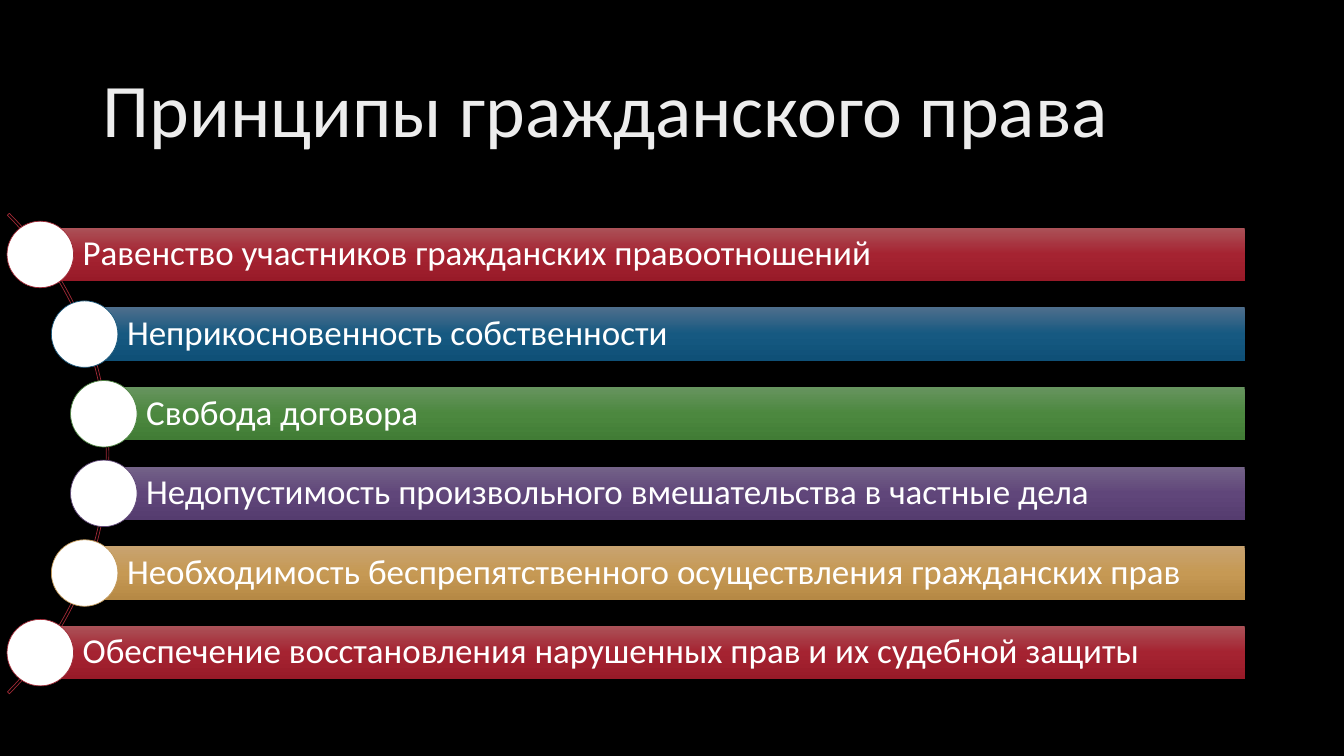
from lxml.etree import SubElement
from pptx import Presentation
from pptx.dml.color import RGBColor as RGB
from pptx.enum.shapes import MSO_SHAPE as SHAPE
from pptx.enum.text import MSO_ANCHOR as ANCHOR, MSO_AUTO_SIZE as AUTO, PP_ALIGN as ALIGN
from pptx.oxml.ns import qn
from pptx.util import Inches, Pt

COLORS = {
    "black": "000000",
    "white": "FFFFFF",
    "red": "9F2936",
    "blue": "1B587C",
    "green": "4E8542",
    "purple": "604878",
    "gold": "C19859",
}
GRADIENTS = {
    "title": [(0, "BFBFBF"), (28, "EDEDED"), (100, "FFFFFF")],
    "red": [(0, "AB5258"), (50, "A52331"), (100, "981A28")],
    "blue": [(0, "4E6E8C"), (50, "165981"), (100, "0F5077")],
    "green": [(0, "67945F"), (50, "4C883F"), (100, "417C35")],
    "purple": [(0, "746388"), (50, "60467A"), (100, "553C6F")],
    "gold": [(0, "C8A370"), (50, "C69954"), (100, "B68945")],
}


def set_gradient(fill, element, stops, angle):
    fill.gradient()
    fill.gradient_angle = 360 - angle
    stop_list = next(element.iter(qn("a:gsLst")))
    for stop in list(stop_list):
        stop_list.remove(stop)
    for position, color in stops:
        stop = SubElement(stop_list, qn("a:gs"), pos=str(position * 1000))
        SubElement(stop, qn("a:srgbClr"), val=color)


def write_text(shape, text, size, color=None, gradient=None, insets=(0.1, 0.05, 0.1, 0.05)):
    tf = shape.text_frame
    tf.word_wrap = True
    tf.auto_size = AUTO.NONE
    tf.vertical_anchor = ANCHOR.MIDDLE
    tf.margin_left, tf.margin_top, tf.margin_right, tf.margin_bottom = map(Inches, insets)
    p = tf.paragraphs[0]
    p.alignment = ALIGN.LEFT
    p.line_spacing = 0.9
    r = p.add_run()
    r.text = text
    r.font.size = Pt(size)
    r.font.name = "Calibri"
    if gradient:
        set_gradient(r.font.fill, p._p, gradient, 80)
    else:
        r.font.color.rgb = RGB.from_string(color)


prs = Presentation()
prs.slide_width, prs.slide_height = Inches(13.33), Inches(7.5)
s = prs.slides.add_slide(prs.slide_layouts[5])
s.background.fill.solid()
s.background.fill.fore_color.rgb = RGB.from_string(COLORS["black"])

title = s.shapes.title
title.left, title.top, title.width, title.height = map(Inches, (0.92, 0.4, 11.5, 1.45))
write_text(title, "Принципы гражданского права", 54, gradient=GRADIENTS["title"])

arc = s.shapes.add_shape(SHAPE.BLOCK_ARC, Inches(-5.66), Inches(1.13), Inches(6.74), Inches(6.74))
arc.shadow.inherit = False
for i, value in enumerate((189, 27, 0.004)):
    arc.adjustments[i] = value
arc.fill.background()
arc.line.color.rgb = RGB.from_string(COLORS["red"])
arc.line.width = Pt(0.5)

principles = [
    (0.4, "red", "Равенство участников гражданских правоотношений"),
    (0.84, "blue", "Неприкосновенность собственности"),
    (1.03, "green", "Свобода договора"),
    (1.03, "purple", "Недопустимость произвольного вмешательства в частные дела"),
    (0.84, "gold", "Необходимость беспрепятственного осуществления гражданских прав"),
    (0.4, "red", "Обеспечение восстановления нарушенных прав и их судебной защиты"),
]
TOP, STEP, RIGHT, BAR_H, DOT = 2.26, 0.79, 12.345, 0.53, 0.66

for i, (left, color, text) in enumerate(principles):
    top = TOP + i * STEP
    bar = s.shapes.add_shape(SHAPE.RECTANGLE, Inches(left), Inches(top),
                             Inches(RIGHT - left), Inches(BAR_H))
    bar.shadow.inherit = False
    set_gradient(bar.fill, bar._element, GRADIENTS[color], 90)
    bar.line.fill.background()
    write_text(bar, text, 25, color=COLORS["white"], insets=(0.42, 0.07, 0.07, 0.07))

    dot = s.shapes.add_shape(SHAPE.OVAL, Inches(left - DOT / 2),
                             Inches(top + (BAR_H - DOT) / 2), Inches(DOT), Inches(DOT))
    dot.shadow.inherit = False
    dot.fill.solid()
    dot.fill.fore_color.rgb = RGB.from_string(COLORS["white"])
    dot.line.color.rgb = RGB.from_string(COLORS[color])
    dot.line.width = Pt(0.5)

prs.save("out.pptx")
